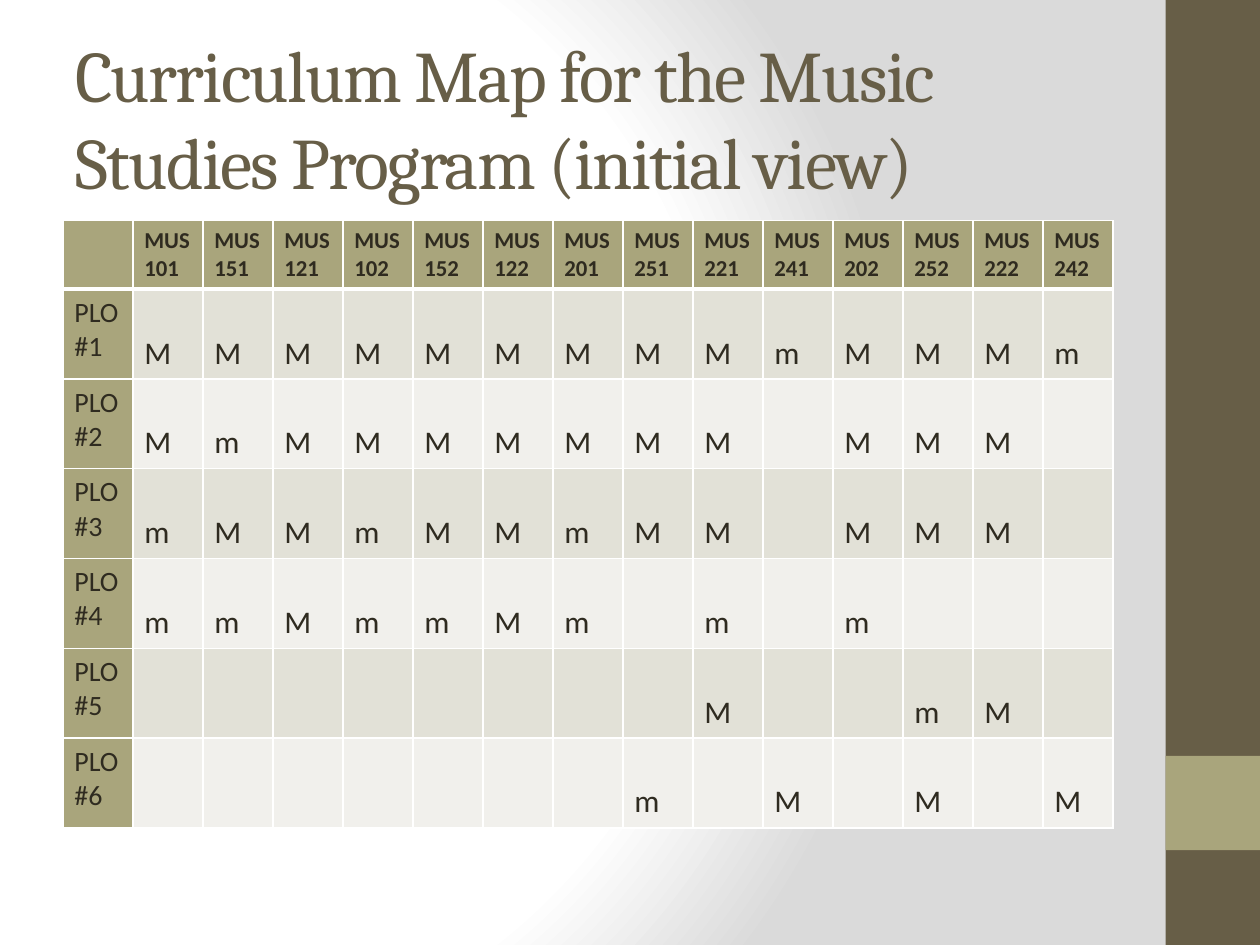
from lxml import etree
from pptx import Presentation
from pptx import oxml
from pptx import util as u
from pptx.dml.color import RGBColor
from pptx.enum import shapes, text
from pptx.oxml import ns

BROWN = RGBColor(0x67, 0x5E, 0x47)
OLIVE = RGBColor(0xA9, 0xA5, 0x7C)
INK = RGBColor(0x2F, 0x2B, 0x20)
WHITE = RGBColor(0xFF, 0xFF, 0xFF)
GREY = RGBColor(0xDA, 0xDA, 0xDA)
BANDS = (RGBColor(0xE2, 0xE1, 0xD7), RGBColor(0xF1, 0xF0, 0xEC))

COURSES = "101 151 121 102 152 122 201 251 221 241 202 252 222 242".split()
OUTCOMES = (
    "MMMMMMMMMmMMMm",
    "MmMMMMMMM-MMM-",
    "mMMmMMmMM-MMM-",
    "mmMmmMm-m-m---",
    "--------M--mM-",
    "-------m-M-M-M",
)


def write_text(frame, content, size, font="Calibri", color=INK, bold=False, spacing=0):
    frame.word_wrap = True
    for index, line in enumerate(content.split("\n")):
        paragraph = frame.paragraphs[0] if index == 0 else frame.add_paragraph()
        paragraph.alignment = text.PP_ALIGN.LEFT
        run = paragraph.add_run()
        run.text = line
        run.font.name = font
        run.font.size = u.Pt(size)
        run.font.bold = bold
        run.font.color.rgb = color
        if spacing:
            run.font._element.set("spc", str(round(spacing * 100)))


class SlideBuilder:
    heading_font = "Cambria"
    header_size = 13
    label_size = 16
    mark_size = 18

    def __init__(self, presentation):
        self.slide = presentation.slides.add_slide(presentation.slide_layouts[5])

    def background(self, stops):
        stop_xml = "".join(
            f'<a:gs pos="{position * 1000}"><a:srgbClr val="{color}"/></a:gs>'
            for position, color in stops
        )
        background = oxml.parse_xml(
            f'<p:bg {ns.nsdecls("p", "a")}><p:bgPr><a:gradFill rotWithShape="1">'
            f'<a:gsLst>{stop_xml}</a:gsLst><a:path path="circle">'
            '<a:fillToRect l="20000" t="50000" r="100000" b="50000"/></a:path>'
            "</a:gradFill><a:effectLst/></p:bgPr></p:bg>"
        )
        self.slide.element.cSld.insert(0, background)

    def rectangle(self, left, top, width, height, color):
        shape = self.slide.shapes.add_shape(
            shapes.MSO_SHAPE.RECTANGLE, u.Cm(left), u.Cm(top), u.Cm(width), u.Cm(height)
        )
        shape.shadow.inherit = False
        shape.fill.solid()
        shape.fill.fore_color.rgb = color
        shape.line.fill.background()

    def title(self, content, left, top, width, height):
        shape = self.slide.shapes.title
        shape.left, shape.top = u.Cm(left), u.Cm(top)
        shape.width, shape.height = u.Cm(width), u.Cm(height)
        frame = shape.text_frame
        frame.auto_size = text.MSO_AUTO_SIZE.NONE
        frame.vertical_anchor = text.MSO_ANCHOR.MIDDLE
        write_text(frame, content, 41.4, self.heading_font, BROWN, spacing=-1)

    def borders(self, cell, top, bottom):
        properties = cell._tc.get_or_add_tcPr()
        for side, width in (("L", 1), ("R", 1), ("T", top), ("B", bottom)):
            line = etree.SubElement(properties, ns.qn(f"a:ln{side}"), w=str(u.Pt(width)))
            fill = etree.SubElement(line, ns.qn("a:solidFill"))
            etree.SubElement(fill, ns.qn("a:srgbClr"), val=str(WHITE))

    def cell(self, cell, row, content, color, size, bold=False, anchor=text.MSO_ANCHOR.TOP):
        self.borders(cell, 3 if row == 1 else 1, 3 if row == 0 else 1)
        cell.fill.solid()
        cell.fill.fore_color.rgb = color
        cell.margin_left = cell.margin_right = u.Cm(0.23)
        cell.margin_top = cell.margin_bottom = u.Cm(0.13)
        cell.vertical_anchor = anchor
        write_text(cell.text_frame, content, size, bold=bold)

    def curriculum_table(self, left, top, width, header_height, row_height):
        rows, columns = len(OUTCOMES) + 1, len(COURSES) + 1
        height = header_height + row_height * len(OUTCOMES)
        table = self.slide.shapes.add_table(
            rows, columns, u.Cm(left), u.Cm(top), u.Cm(width), u.Cm(height)
        ).table
        table.first_row = table.horz_banding = False
        for column in table.columns:
            column.width = u.Cm(width / columns)
        for index, row in enumerate(table.rows):
            row.height = u.Cm(row_height if index else header_height)

        headers = [""] + [f"MUS\n{course}" for course in COURSES]
        for column, header in enumerate(headers):
            self.cell(table.cell(0, column), 0, header, OLIVE, self.header_size, bold=True)
        for row, marks in enumerate(OUTCOMES, 1):
            self.cell(table.cell(row, 0), row, f"PLO\n#{row}", OLIVE, self.label_size)
            for column, mark in enumerate(marks, 1):
                self.cell(
                    table.cell(row, column), row, mark.replace("-", ""),
                    BANDS[(row - 1) % 2], self.mark_size, anchor=text.MSO_ANCHOR.BOTTOM,
                )


def main():
    presentation = Presentation()
    presentation.slide_width, presentation.slide_height = u.Cm(25.4), u.Cm(19.05)
    builder = SlideBuilder(presentation)
    builder.background(((0, WHITE), (75, WHITE), (100, GREY)))
    builder.rectangle(23.5, 0, 1.9, 19.05, BROWN)
    builder.rectangle(23.5, 15.24, 1.9, 1.9, OLIVE)
    builder.title(
        "Curriculum Map for the Music Studies Program (initial view)", 1.27, 0.76, 21.17, 3.18
    )
    builder.curriculum_table(1.27, 4.45, 21.17, 1.37, 1.81)
    presentation.save("out.pptx")


if __name__ == "__main__":
    main()
